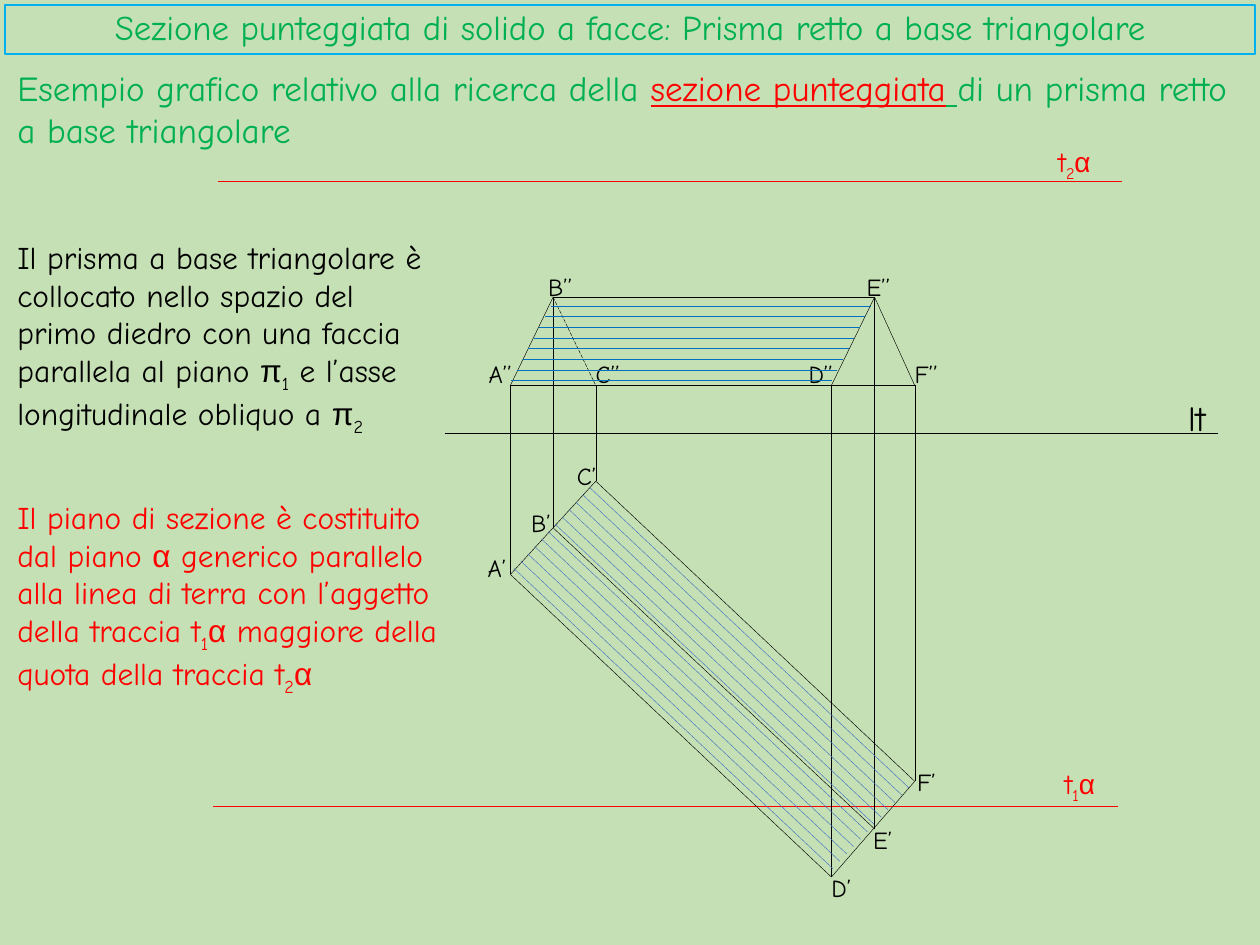
from lxml import etree
from pptx import Presentation
from pptx.dml.color import RGBColor
from pptx.enum.dml import MSO_LINE
from pptx.enum.shapes import MSO_CONNECTOR, MSO_SHAPE
from pptx.enum.text import MSO_ANCHOR, MSO_AUTO_SIZE, PP_ALIGN
from pptx.oxml.ns import qn
from pptx.util import Cm, Pt

COLOURS = {
    "background": "C5E0B4",
    "ink": "000000",
    "section": "FF0000",
    "heading": "00B050",
    "frame": "00B0F0",
    "plan hatch": "4472C4",
    "elevation hatch": "0070C0",
}
FONT = "Comic Neue"
GREEK = {"font": "Arial"}
SUB = {"baseline": -25000}

VERTICES = {
    "A’": (10.29, 11.58), "B’": (11.15, 10.64), "C’": (12.01, 9.7),
    "D’": (16.76, 17.68), "E’": (17.63, 16.71), "F’": (18.44, 15.75),
    "A’’": (10.29, 7.77), "B’’": (11.15, 5.99), "C’’": (12.01, 7.77),
    "D’’": (16.76, 7.77), "E’’": (17.63, 5.99), "F’’": (18.44, 7.77),
}
LABEL_PLACES = {
    "A’": (9.58, 11.02), "B’": (10.46, 10.11), "C’": (11.38, 9.17),
    "D’": (16.51, 17.48), "E’": (17.35, 16.51), "F’": (18.24, 15.34),
    "A’’": (9.6, 7.11), "B’’": (10.8, 5.36), "C’’": (11.76, 7.11),
    "D’’": (16.05, 7.11), "E’’": (17.22, 5.36), "F’’": (18.19, 7.11),
}
PLAN_EDGES = ["AD", "CF", "BE", "CA", "FD"]
ELEVATION_EDGES = ["AF", "BE", "AB", "EF", "ED"]


def rgb(name):
    return RGBColor.from_string(COLOURS[name])


def add_line(shapes, start, end, colour="ink", dash=None):
    line = shapes.add_connector(MSO_CONNECTOR.STRAIGHT, *map(Cm, start + end))
    line.line.color.rgb = rgb(colour)
    line.line.width = Pt(0.25)
    if dash:
        line.line.dash_style = dash
    etree.SubElement(line._element.spPr, qn("a:effectLst"))


def add_hatch(slide, first, last, run, count, colour):
    hatch = slide.shapes.add_group_shape()
    for i in range(count):
        x, y = (a + (b - a) * i / (count - 1) for a, b in zip(first, last))
        add_line(hatch.shapes, (x, y), (x + run[0], y + run[1]), colour)


def write_text(frame, runs, size, colour="ink", align=PP_ALIGN.LEFT):
    frame.word_wrap = True
    paragraph = frame.paragraphs[0]
    paragraph.alignment = align
    for text, style in runs:
        run = paragraph.add_run()
        run.text = text
        run.font.size = Pt(size)
        run.font.name = style.get("font", FONT)
        run.font.color.rgb = rgb(style.get("colour", colour))
        if style.get("underline"):
            run.font.underline = True
        if "baseline" in style:
            run.font._element.set("baseline", str(style["baseline"]))


def add_text(slide, box, runs, **text_format):
    frame = slide.shapes.add_textbox(*map(Cm, box)).text_frame
    write_text(frame, runs, **text_format)
    frame.auto_size = MSO_AUTO_SIZE.SHAPE_TO_FIT_TEXT


def add_title(slide, text):
    banner = slide.shapes.add_shape(
        MSO_SHAPE.RECTANGLE, Cm(0.1), Cm(0.1), Cm(25.2), Cm(0.99))
    banner.shadow.inherit = False
    banner.fill.background()
    banner.line.color.rgb = rgb("frame")
    banner.line.width = Pt(0.75)
    banner.text_frame.vertical_anchor = MSO_ANCHOR.BOTTOM
    write_text(banner.text_frame, [(text, {})], size=19.8,
               colour="heading", align=PP_ALIGN.CENTER)


def draw_prism(slide):
    for edges, mark in ((PLAN_EDGES, "’"), (ELEVATION_EDGES, "’’")):
        for start, end in edges:
            add_line(slide.shapes, VERTICES[start + mark], VERTICES[end + mark])
    add_line(slide.shapes, VERTICES["B’’"], VERTICES["C’’"],
             dash=MSO_LINE.LONG_DASH)
    for vertex in "ABCDEF":
        add_line(slide.shapes, VERTICES[vertex + "’"], VERTICES[vertex + "’’"])
    for label, place in LABEL_PLACES.items():
        add_text(slide, (*place, 1.05, 0.86), [(label, {})], size=14)
    add_hatch(slide, (11.89, 9.83), (10.36, 11.46), (6.43, 6.05), 12, "plan hatch")
    add_hatch(slide, (11.1, 6.17), (10.31, 7.67), (6.46, 0), 8, "elevation hatch")


def draw_traces(slide):
    add_line(slide.shapes, (8.97, 8.74), (24.56, 8.74))
    add_text(slide, (23.7, 7.87, 1.3, 1.12), [("lt", {})], size=20)
    for number, start, end, place in (
        ("1", (4.29, 16.26), (22.53, 16.26), (21.21, 15.32)),
        ("2", (4.39, 3.66), (22.61, 3.66), (21.08, 2.79)),
    ):
        add_line(slide.shapes, start, end, "section")
        add_text(slide, (*place, 1.4, 0.94),
                 [("t", {}), (number, SUB), ("α", GREEK)],
                 size=16, colour="section")


def write_explanations(slide):
    add_text(slide, (0.1, 1.22, 25.2, 1.96), [
        ("Esempio grafico relativo alla ricerca della ", {}),
        ("sezione punteggiata", {"colour": "section", "underline": True}),
        (" ", {"underline": True}),
        ("di un prisma retto a base triangolare", {}),
    ], size=20, colour="heading")
    add_text(slide, (0.1, 4.67, 8.99, 4.11), [
        ("Il prisma a base triangolare è collocato nello spazio del primo "
         "diedro con una faccia parallela al piano ", {}),
        ("π", GREEK), ("1", SUB),
        (" e l’asse longitudinale obliquo a ", {}),
        ("π", GREEK), ("2", SUB),
    ], size=18)
    add_text(slide, (0.1, 9.91, 8.99, 4.88), [
        ("Il piano di sezione è costituito dal piano ", {}),
        ("α", GREEK),
        (" generico parallelo alla linea di terra con l’aggetto della "
         "traccia t", {}),
        ("1", SUB), ("α", GREEK),
        (" maggiore della quota della traccia t", {}),
        ("2", SUB), ("α", GREEK),
    ], size=18, colour="section")


def main():
    presentation = Presentation()
    presentation.slide_width = Cm(25.4)
    presentation.slide_height = Cm(19.05)
    slide = presentation.slides.add_slide(presentation.slide_layouts[6])
    slide.background.fill.solid()
    slide.background.fill.fore_color.rgb = rgb("background")
    draw_traces(slide)
    draw_prism(slide)
    add_title(slide, "Sezione punteggiata di solido a facce: "
                     "Prisma retto a base triangolare")
    write_explanations(slide)
    presentation.save("out.pptx")


if __name__ == "__main__":
    main()
